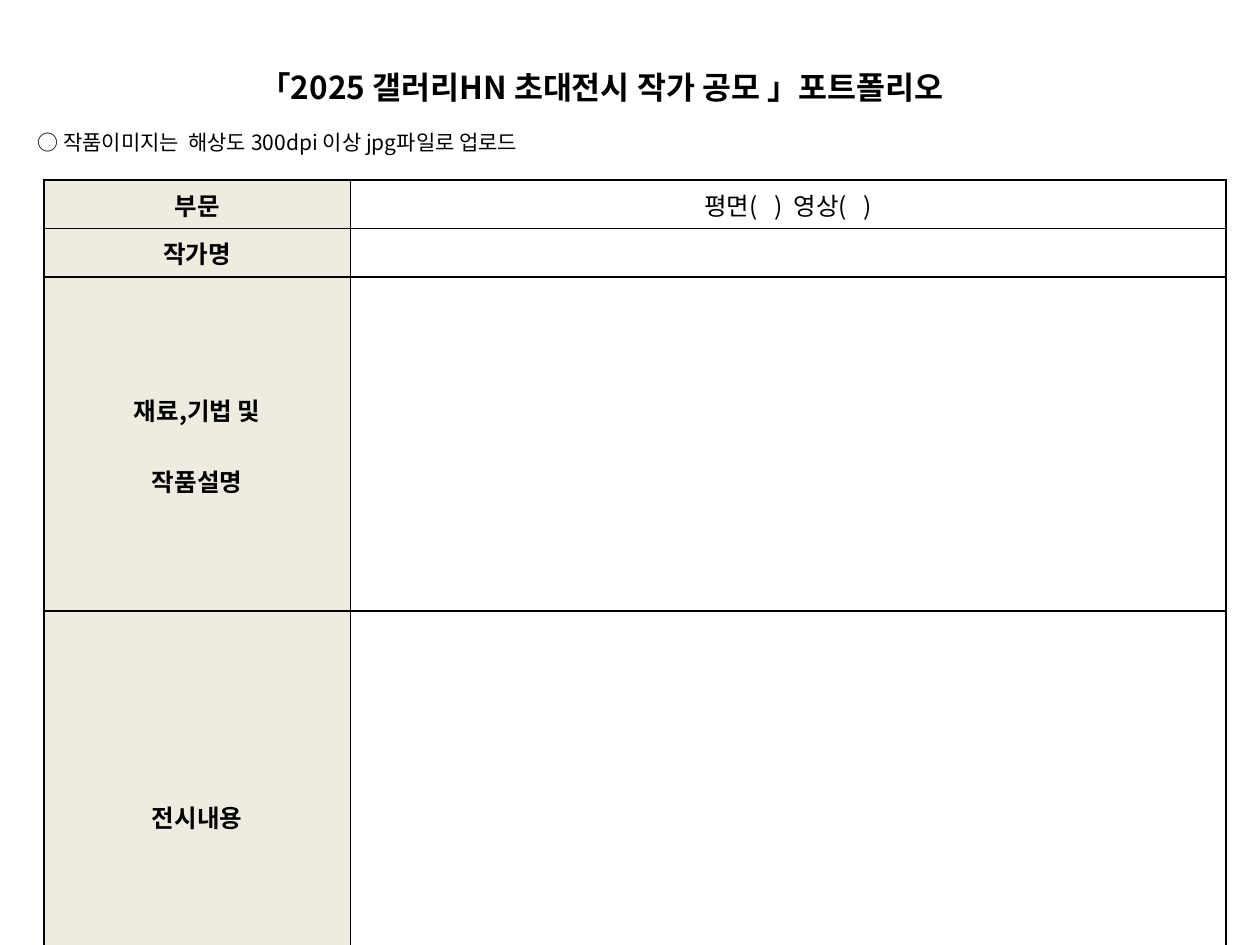
"""Build the portfolio form slide for an artist open call."""
import pptx
import pptx.util
import pptx.dml.color
import pptx.enum.text
import pptx.oxml
import pptx.oxml.ns
import lxml.etree

Inches = pptx.util.Inches
Pt = pptx.util.Pt
ALIGN = pptx.enum.text.PP_ALIGN
BLACK = pptx.dml.color.RGBColor(0, 0, 0)
BEIGE = pptx.dml.color.RGBColor(0xEE, 0xEC, 0xE1)
FONT = "Noto Sans CJK KR"
qn = pptx.oxml.ns.qn


def style(frame, size, bold, align):
    for para in frame.paragraphs:
        para.alignment = align
        for run in para.runs:
            run.font.size = Pt(size)
            run.font.bold = bold
            run.font.name = FONT
            run.font.color.rgb = BLACK
            east = lxml.etree.SubElement(run.font._element, qn("a:ea"))
            east.set("typeface", FONT)


def border(cell):
    props = cell._tc.get_or_add_tcPr()
    for spot, side in enumerate(("lnL", "lnR", "lnT", "lnB")):
        line = lxml.etree.Element(qn("a:" + side), w=str(Pt(1)))
        fill = lxml.etree.SubElement(line, qn("a:solidFill"))
        lxml.etree.SubElement(fill, qn("a:srgbClr"), val=str(BLACK))
        props.insert(spot, line)


deck = pptx.Presentation()
deck.slide_width = Inches(10)
deck.slide_height = Inches(7.5)
slide = deck.slides.add_slide(deck.slide_layouts[6])

rows = [
    ("부문", "평면(   )  영상(   )", 0.38, 0.05),
    ("작가명", "", 0.38, 0.05),
    ("재료,기법 및\n작품설명", "", 2.65, 0.91),
    ("전시내용", "", 2.7, 1.49),
]
high = sum(row[2] for row in rows)
table = slide.shapes.add_table(
    len(rows), 2, Inches(0.35), Inches(1.43), Inches(9.38), Inches(high)
).table
table.first_row = False
table.horz_banding = False
for column, width in zip(table.columns, (2.43, 6.95)):
    column.width = Inches(width)

for index, (label, value, height, top) in enumerate(rows):
    table.rows[index].height = Inches(height)
    head, body = table.cell(index, 0), table.cell(index, 1)
    for cell, text in ((head, label), (body, value)):
        cell.text_frame.text = text
        style(cell.text_frame, 14, cell is head, ALIGN.CENTER)
        border(cell)
    head.fill.solid()
    head.fill.fore_color.rgb = BEIGE
    head.margin_top = Inches(top)
    body.fill.background()
    if not value:
        body.margin_top = body.margin_bottom = 0
    for para in head.text_frame.paragraphs[1:]:
        para.space_before = Pt(20.5)

notes = [
    ("「2025 갤러리HN 초대전시 작가 공모 」포트폴리오",
     (1.76, 0.31, 6.03, 0.52), 18, True, ALIGN.CENTER),
    ("○ 작품이미지는  해상도 300dpi 이상 jpg파일로 업로드",
     (0.2, 0.86, 8.5, 0.63), 12, False, ALIGN.JUSTIFY),
]
for text, place, size, bold, align in notes:
    box = slide.shapes.add_textbox(*map(Inches, place))
    frame = box.text_frame
    frame.word_wrap = not bold
    frame.auto_size = pptx.enum.text.MSO_AUTO_SIZE.SHAPE_TO_FIT_TEXT
    frame.text = text
    style(frame, size, bold, align)
    frame.paragraphs[0].line_spacing = 1.6

deck.save("out.pptx")
